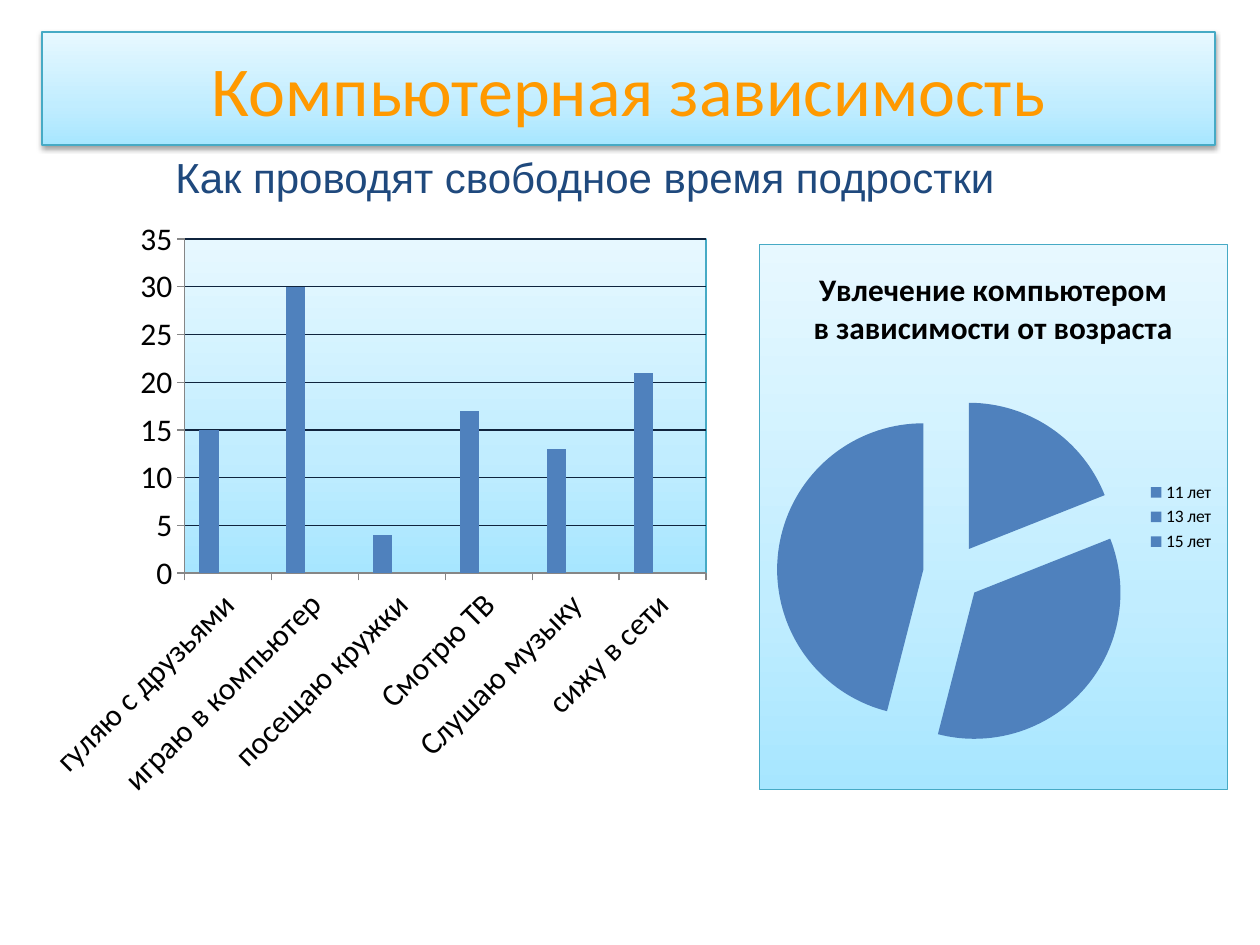
from dataclasses import dataclass

from pptx import Presentation
from pptx.chart.data import CategoryChartData
from pptx.dml.color import RGBColor
from pptx.enum.chart import XL_CHART_TYPE, XL_LEGEND_POSITION, XL_TICK_MARK
from pptx.enum.shapes import MSO_SHAPE
from pptx.enum.text import MSO_ANCHOR, PP_ALIGN
from pptx.oxml import parse_xml
from pptx.oxml.ns import nsdecls, qn
from pptx.util import Emu, Pt

COLUMN, PIE = XL_CHART_TYPE.COLUMN_CLUSTERED, XL_CHART_TYPE.PIE
RIGHT, OUTSIDE = XL_LEGEND_POSITION.RIGHT, XL_TICK_MARK.OUTSIDE
RECT, CENTER = MSO_SHAPE.RECTANGLE, PP_ALIGN.CENTER
MIDDLE, TOP = MSO_ANCHOR.MIDDLE, MSO_ANCHOR.TOP
EMU_PER_PX = 914400 / 126


@dataclass(frozen=True)
class Theme:
    heading_font: str = "Calibri"
    body_font: str = "Arial"
    heading: str = "FF9900"
    subtitle: str = "1F497D"
    ink: str = "000000"
    border: str = "46AAC5"
    grid: str = "0F243E"
    axis: str = "868686"
    series: tuple = ("4F81BD", "C0504D", "9BBB59")
    gradient: tuple = ((0, "A7E6FF"), (35, "C1EDFF"), (100, "E7F8FF"))
    heading_size: int = 40
    subtitle_size: int = 24
    chart_size: int = 18
    legend_size: int = 10
    line: float = 0.75


@dataclass(frozen=True)
class Box:
    x: int
    y: int
    w: int
    h: int

    def emu(self) -> tuple:
        return tuple(px(v) for v in (self.x, self.y, self.w, self.h))


@dataclass(frozen=True)
class ChartSpec:
    kind: int
    box: Box
    cats: tuple
    rows: tuple
    size: int


T = Theme()
TITLE_BOX = Box(42, 32, 1173, 113)
SUBTITLE_BOX = Box(64, 145, 1042, 63)
LEISURE = ChartSpec(
    COLUMN, Box(35, 209, 684, 601),
    ("гуляю с друзьями", "играю в компьютер", "посещаю кружки",
     "Смотрю ТВ", "Слушаю музыку", "сижу в сети"),
    ((15, 30, 4, 17, 13, 21), (None,) * 6, (None,) * 6), T.chart_size)
AGES = ChartSpec(
    PIE, Box(759, 244, 469, 546),
    ("11 лет", "13 лет", "15 лет"), ((19, 35, 46),), T.legend_size)
PLOT_BOX = Box(185, 239, 521, 334)


def px(value: int) -> Emu:
    return Emu(round(value * EMU_PER_PX))


def rgb(value: str) -> RGBColor:
    return RGBColor.from_string(value)


def gradient_xml() -> str:
    stops = "".join(f'<a:gs pos="{pos * 1000}"><a:srgbClr val="{color}"/></a:gs>'
                    for pos, color in T.gradient)
    return (f'<a:gradFill {nsdecls("a")} rotWithShape="1"><a:gsLst>{stops}</a:gsLst>'
            '<a:lin ang="16200000" scaled="1"/></a:gradFill>')


def panel_xml() -> str:
    return (f'<c:spPr {nsdecls("c", "a")}>{gradient_xml()}<a:ln w="{Pt(T.line)}">'
            f'<a:solidFill><a:srgbClr val="{T.border}"/></a:solidFill></a:ln></c:spPr>')


def set_text(tf, text: str, font: str, size: int, color: str, anchor) -> None:
    tf.word_wrap = True
    tf.vertical_anchor = anchor
    p = tf.paragraphs[0]
    p.alignment = CENTER
    r = p.add_run()
    r.text = text
    r.font.name, r.font.size = font, Pt(size)
    r.font.color.rgb = rgb(color)


def add_chart(shapes, spec: ChartSpec):
    data = CategoryChartData()
    data.categories = spec.cats
    for i, values in enumerate(spec.rows, 1):
        data.add_series(f"Series {i}", values)
    chart = shapes.add_chart(spec.kind, *spec.box.emu(), data).chart
    chart.font.name, chart.font.size = T.heading_font, Pt(spec.size)
    chart.font.color.rgb = rgb(T.ink)
    return chart


def place_plot(chart, frame: Box, plot: Box) -> None:
    """Fix the inner plot area as fractions of the chart frame."""
    parts = {"x": (plot.x - frame.x) / frame.w, "y": (plot.y - frame.y) / frame.h,
             "w": plot.w / frame.w, "h": plot.h / frame.h}
    values = "".join(f'<c:{k} val="{v:.3f}"/>' for k, v in parts.items())
    area = chart._chartSpace.chart.plotArea
    for old in area.findall(qn("c:layout")):
        area.remove(old)
    area.insert(0, parse_xml(
        f'<c:layout {nsdecls("c")}><c:manualLayout><c:layoutTarget val="inner"/>'
        f'<c:xMode val="edge"/><c:yMode val="edge"/>{values}</c:manualLayout></c:layout>'))


def add_title(shapes) -> None:
    s = shapes.add_shape(RECT, *TITLE_BOX.emu())
    s._element.spPr.append(parse_xml(gradient_xml()))
    s.line.color.rgb = rgb(T.border)
    s.line.width = Pt(T.line)
    s._element.spPr.append(parse_xml(
        f'<a:effectLst {nsdecls("a")}><a:outerShdw blurRad="{Pt(3.1)}" dist="{Pt(1.6)}" '
        f'dir="5400000" rotWithShape="0"><a:srgbClr val="{T.ink}"><a:alpha val="38000"/>'
        '</a:srgbClr></a:outerShdw></a:effectLst>'))
    set_text(s.text_frame, "Компьютерная зависимость", T.heading_font,
             T.heading_size, T.heading, MIDDLE)


def add_leisure_chart(shapes) -> None:
    chart = add_chart(shapes, LEISURE)
    chart.has_title = chart.has_legend = False
    plot = chart.plots[0]
    plot.gap_width, plot.overlap = 150, 0
    plot.vary_by_categories = False
    for series, color in zip(plot.series, T.series):
        series.format.fill.solid()
        series.format.fill.fore_color.rgb = rgb(color)
    for axis in (chart.category_axis, chart.value_axis):
        axis.major_tick_mark = OUTSIDE
        axis.format.line.color.rgb = rgb(T.axis)
        axis.tick_labels.font.size = Pt(T.chart_size)
    grid = chart.value_axis.major_gridlines.format.line
    grid.color.rgb, grid.width = rgb(T.grid), Pt(T.line)
    # Slanted category labels
    labels = chart.category_axis._element.find(qn("c:txPr"))
    labels.find(qn("a:bodyPr")).set("rot", "-2700000")
    place_plot(chart, LEISURE.box, PLOT_BOX)
    chart._chartSpace.chart.plotArea.append(parse_xml(panel_xml()))


def add_age_chart(shapes) -> None:
    chart = add_chart(shapes, AGES)
    chart.has_title = True
    p = chart.chart_title.text_frame.paragraphs[0]
    r = p.add_run()
    r.text = "Увлечение компьютером в зависимости от возраста"
    r.font.name, r.font.size, r.font.bold = T.heading_font, Pt(T.chart_size), True
    r.font.color.rgb = rgb(T.ink)
    chart.has_legend = True
    chart.legend.position = RIGHT
    chart.legend.include_in_layout = False
    # Exploded slices in one colour
    plot = chart.plots[0]
    plot.vary_by_categories = True
    series = plot.series[0]
    for i in range(len(AGES.cats)):
        fill = series.points[i].format.fill
        fill.solid()
        fill.fore_color.rgb = rgb(T.series[0])
    series._element.find(qn("c:dPt")).addprevious(
        parse_xml(f'<c:explosion {nsdecls("c")} val="20"/>'))
    chart._chartSpace.chart.addnext(parse_xml(panel_xml()))


def main() -> None:
    prs = Presentation()
    prs.slide_width, prs.slide_height = px(1260), px(945)
    shapes = prs.slides.add_slide(prs.slide_layouts[6]).shapes
    add_title(shapes)
    add_leisure_chart(shapes)
    add_age_chart(shapes)
    # Subtitle
    s = shapes.add_textbox(*SUBTITLE_BOX.emu())
    set_text(s.text_frame, "Как проводят свободное время подростки", T.body_font,
             T.subtitle_size, T.subtitle, TOP)
    prs.save("out.pptx")


if __name__ == "__main__":
    main()
